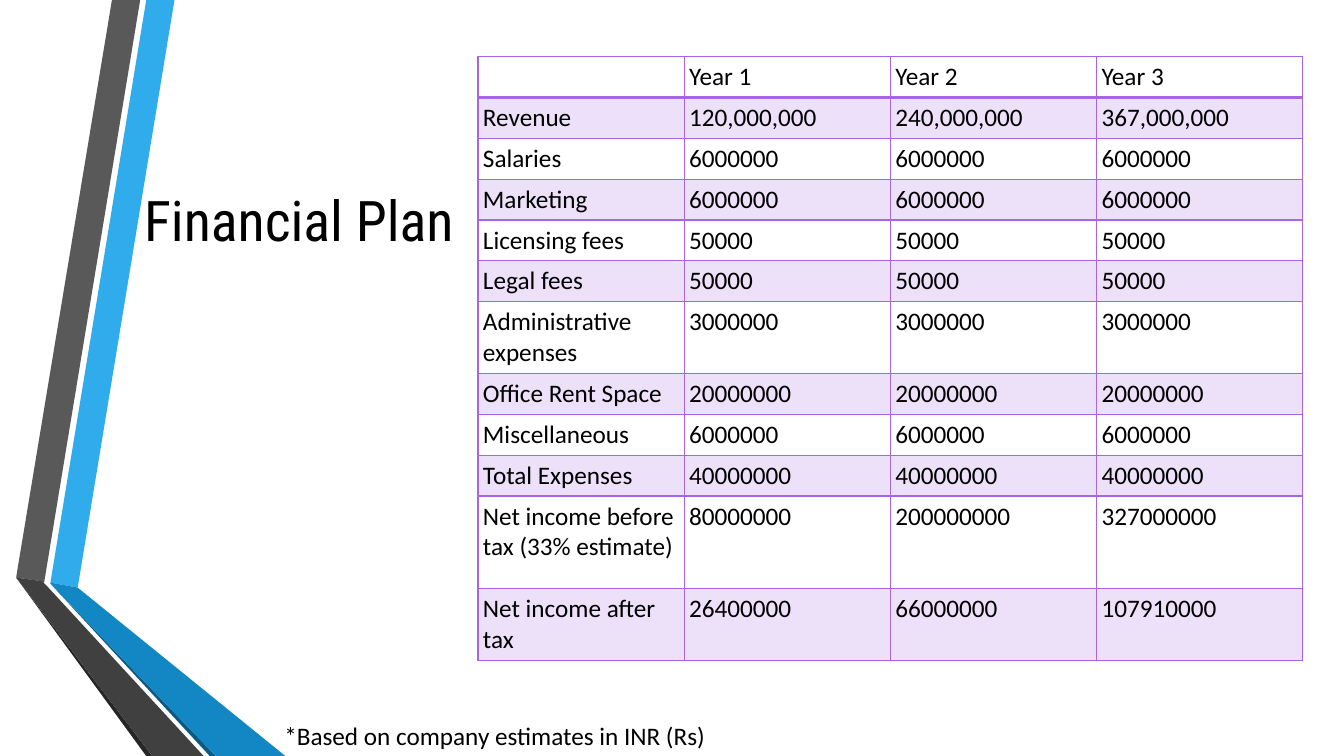
"""Build the financial plan slide."""
import lxml.etree
import pptx
import pptx.dml.color
import pptx.enum.text
import pptx.oxml.ns
import pptx.util

HUES = {
    "text": "000000", "rule": "A666E1", "sky": "30ACEC", "gray": "595959",
    "black": "262626", "navy": "0C5A82", "blue": "1287C3", "dark": "404040",
}
BANDS = [
    ("sky", [(3.75, 77.07), (5.78, 77.73), (12.98, 0), (10.88, 0)]),
    ("gray", [(10.43, 0), (8.33, 0), (1.2, 76.4), (3.3, 76.93)]),
    ("black", [(1.2, 76.4), (10.88, 100), (11.33, 100)]),
    ("navy", [(3.75, 77.2), (15.6, 100), (16.05, 100)]),
    ("blue", [(3.75, 77.2), (16.05, 100), (21.23, 100), (5.78, 77.73), (3.75, 77.07)]),
    ("dark", [(15.15, 100), (3.6, 77.73), (3.23, 77.07), (3.3, 76.93),
              (1.2, 76.4), (11.33, 100)]),
]
ONE, TWO, THREE = 4.93, 8.53, 12.27
ROWS = [
    (ONE, "", "Year 1", "Year 2", "Year 3"),
    (ONE, "Revenue", "120,000,000", "240,000,000", "367,000,000"),
    (ONE, "Salaries", *["6000000"] * 3),
    (ONE, "Marketing", *["6000000"] * 3),
    (ONE, "Licensing fees", *["50000"] * 3),
    (ONE, "Legal fees", *["50000"] * 3),
    (TWO, "Administrative expenses", *["3000000"] * 3),
    (ONE, "Office Rent Space", *["20000000"] * 3),
    (ONE, "Miscellaneous", *["6000000"] * 3),
    (ONE, "Total Expenses", *["40000000"] * 3),
    (THREE, "Net income before tax (33% estimate)", "80000000", "200000000", "327000000"),
    (TWO, "Net income after tax", "26400000", "66000000", "107910000"),
]


class Deck:
    """Hold the style and the slide, with lengths in percent of its size."""

    def __init__(self):
        """Open a slide with a title."""
        self.file = pptx.Presentation()
        self.file.slide_width = pptx.util.Inches(13.33)
        self.file.slide_height = pptx.util.Inches(7.5)
        self.slide = self.file.slides.add_slide(self.file.slide_layouts[5])
        self.font, self.size = "Calibri", 18
        self.pad = pptx.util.Inches(0.05)

    def wide(self, share):
        """Turn a share of the width into a length."""
        return round(self.file.slide_width * share / 100)

    def high(self, share):
        """Turn a share of the height into a length."""
        return round(self.file.slide_height * share / 100)

    def area(self, left, top, width, height):
        """Turn four shares into a box."""
        return self.wide(left), self.high(top), self.wide(width), self.high(height)

    def hue(self, name):
        """Look up a colour."""
        return pptx.dml.color.RGBColor.from_string(HUES[name])

    def inset(self, box):
        """Set equal margins on a frame or cell."""
        box.margin_left = box.margin_right = self.pad
        box.margin_top = box.margin_bottom = self.pad

    def label(self, frame, words, font=None, size=None):
        """Add one styled run to a frame."""
        run = frame.paragraphs[0].add_run()
        run.text = words
        run.font.name = font or self.font
        run.font.size = pptx.util.Pt(size or self.size)
        run.font.color.rgb = self.hue("text")

    def band(self, name, dots):
        """Draw a filled outline."""
        dots = [(self.wide(x), self.high(y)) for x, y in dots]
        pen = self.slide.shapes.build_freeform(*dots[0])
        pen.add_line_segments(dots[1:], close=True)
        shape = pen.convert_to_shape()
        shape.shadow.inherit = False
        shape.fill.solid()
        shape.fill.fore_color.rgb = self.hue(name)
        shape.line.fill.background()

    def title(self, words, box):
        """Fill the title and bring it to the front."""
        shape = self.slide.shapes.title
        shape.left, shape.top, shape.width, shape.height = self.area(*box)
        frame = shape.text_frame
        frame.word_wrap = True
        frame.vertical_anchor = pptx.enum.text.MSO_ANCHOR.MIDDLE
        frame.paragraphs[0].alignment = pptx.enum.text.PP_ALIGN.CENTER
        self.inset(frame)
        self.label(frame, words, "Roboto Condensed", 40)
        shape._element.getparent().append(shape._element)

    def note(self, words, box):
        """Add a text box."""
        frame = self.slide.shapes.add_textbox(*self.area(*box)).text_frame
        frame.word_wrap = True
        frame.auto_size = pptx.enum.text.MSO_AUTO_SIZE.SHAPE_TO_FIT_TEXT
        self.inset(frame)
        self.label(frame, words)

    def child(self, root, tag, **marks):
        """Add a drawing element under a root."""
        return lxml.etree.SubElement(root, pptx.oxml.ns.qn("a:" + tag), **marks)

    def edge(self, cell, head):
        """Rule the four sides of a cell."""
        props = cell._tc.get_or_add_tcPr()
        for side in "LRTB":
            width = 2 if head and side == "B" else 1
            line = self.child(props, "ln" + side, w=str(pptx.util.Pt(width)))
            self.child(self.child(line, "solidFill"), "srgbClr", val=HUES["rule"])

    def tint(self, cell):
        """Fill a cell with a pale wash."""
        cell.fill.solid()
        cell.fill.fore_color.rgb = self.hue("rule")
        tone = cell._tc.tcPr.find(pptx.oxml.ns.qn("a:solidFill"))[0]
        self.child(tone, "alpha", val="20000")

    def table(self, rows, box):
        """Add a ruled table with every other row washed."""
        count = len(rows[0]) - 1
        grid = self.slide.shapes.add_table(len(rows), count, *self.area(*box)).table
        grid.first_row = grid.horz_banding = False
        for col in grid.columns:
            col.width = self.wide(box[2] / count)
        for i, (tall, *words) in enumerate(rows):
            grid.rows[i].height = self.high(tall)
            for j, word in enumerate(words):
                cell = grid.cell(i, j)
                self.inset(cell)
                self.edge(cell, i == 0)
                if i % 2:
                    self.tint(cell)
                else:
                    cell.fill.background()
                if word:
                    self.label(cell.text_frame, word)


def main():
    """Draw the slide and save it."""
    deck = Deck()
    for name, dots in BANDS:
        deck.band(name, dots)
    deck.title("Financial Plan", (-10.8, 16.13, 66.09, 25.6))
    deck.table(ROWS, (35.56, 7.47, 61.37, sum(row[0] for row in ROWS)))
    deck.note("*Based on company estimates in INR (Rs)", (20.78, 94.67, 55.36, 5.07))
    deck.file.save("out.pptx")


if __name__ == "__main__":
    main()
